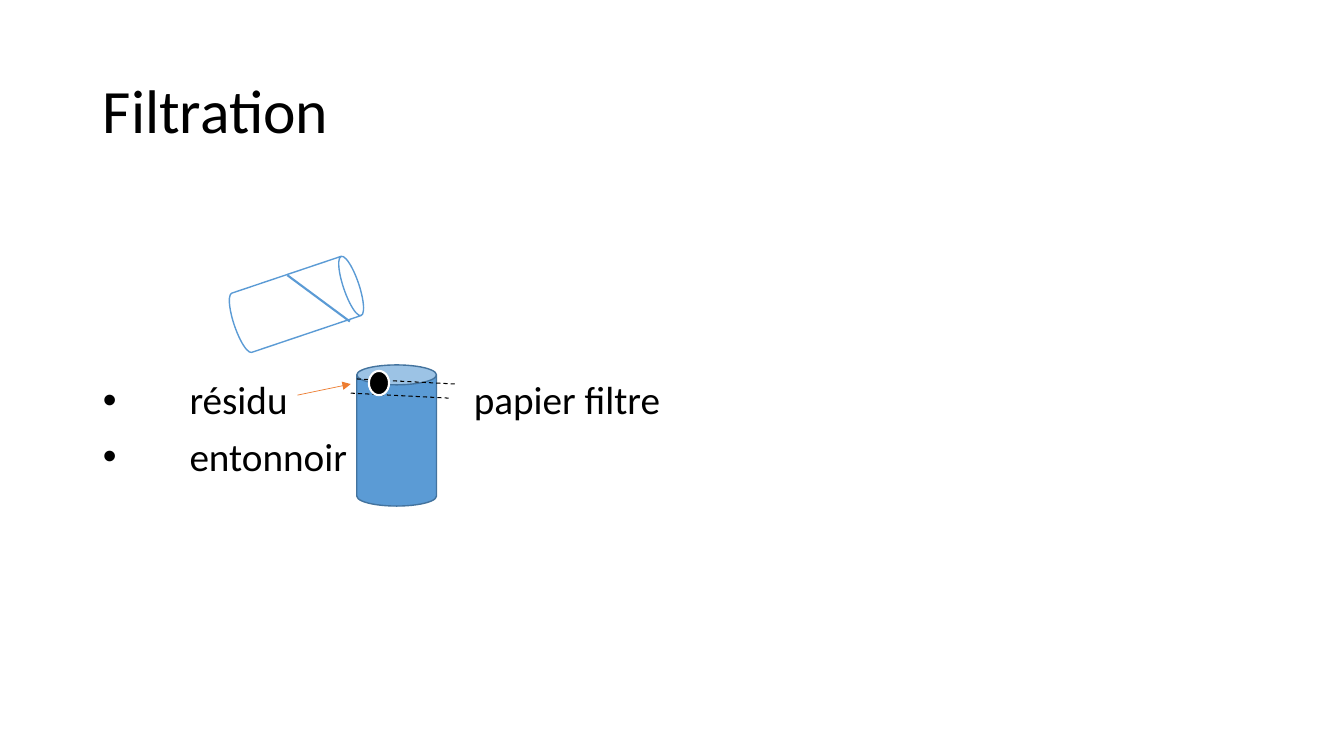
from pptx import Presentation, util as u
from pptx.dml.color import RGBColor
from pptx.enum import dml, shapes, text
from pptx.oxml.ns import qn
from lxml import etree

HUES = {"ink": "000000", "paper": "FFFFFF", "blue": "5B9BD5",
        "rim": "43739E", "arrow": "ED7D31"}
WIDE, HIGH = u.Inches(13.33), u.Inches(7.5)
GRID = 100  # columns and rows on the slide


def hue(name):
    return RGBColor.from_string(HUES[name])


def cols(n):
    return round(WIDE * n / GRID)


def rows(n):
    return round(HIGH * n / GRID)


def place(holder, box):
    x, y, w, h = box
    holder.left, holder.top = cols(x), rows(y)
    holder.width, holder.height = cols(w), rows(h)


def style(par, size):
    par.alignment = text.PP_ALIGN.LEFT
    par.line_spacing = 0.9
    par.font.name, par.font.size = "Calibri", u.Pt(size)
    par.font.color.rgb = hue("ink")


def head(slide, box, words):
    title = slide.shapes.title
    place(title, box)
    frame = title.text_frame
    frame.text = words
    frame.vertical_anchor = text.MSO_ANCHOR.MIDDLE
    frame.auto_size = text.MSO_AUTO_SIZE.NONE
    style(frame.paragraphs[0], 44)


def labels(slide, box, lines):
    """Bulleted labels; a tab carries a label to the right of the vessel."""
    body = slide.placeholders[1]
    place(body, box)
    frame = body.text_frame
    frame.text = "\n".join(lines)
    frame.auto_size = text.MSO_AUTO_SIZE.NONE
    for i, par in enumerate(frame.paragraphs):
        props = par._p.get_or_add_pPr()
        props.set("marL", str(cols(6.45)))
        props.set("indent", str(-cols(6.45)))
        font = etree.SubElement(props, qn("a:buFont"))
        font.set("typeface", "Arial")
        etree.SubElement(props, qn("a:buChar")).set("char", "•")
        tabs = etree.SubElement(props, qn("a:tabLst"))
        stop = etree.SubElement(tabs, qn("a:tab"))
        stop.set("pos", str(cols(27.6)))
        stop.set("algn", "l")
        style(par, 28)
        par.space_before = u.Pt(10 if i else 0)


def solid(slide, box, kind, fill, edge, width, turn=0):
    item = slide.shapes.add_shape(kind, 0, 0, 0, 0)
    place(item, box)
    item.rotation = turn
    item.shadow.inherit = False
    item.fill.solid()
    item.fill.fore_color.rgb = hue(fill)
    item.line.color.rgb = hue(edge)
    item.line.width = u.Pt(width)


def stroke(slide, start, end, color, width, dash=False, tip=False):
    (x, y), (p, q) = start, end
    line = slide.shapes.add_connector(
        shapes.MSO_CONNECTOR.STRAIGHT, cols(x), rows(y), cols(p), rows(q))
    line.line.color.rgb = hue(color)
    line.line.width = u.Pt(width)
    if dash:
        line.line.dash_style = dml.MSO_LINE.DASH
    if tip:
        end = etree.SubElement(line.line._get_or_add_ln(), qn("a:tailEnd"))
        end.set("type", "triangle")
    etree.SubElement(line._element.spPr, qn("a:effectLst"))


def setup(slide, left, top):
    """Tilted beaker above a vessel with its filter and residue."""
    def at(x, y, *size):
        return (left + x, top + y, *size)

    kind = shapes.MSO_SHAPE
    solid(slide, at(4.73, 1.6, 4.65, 17.33), kind.CAN, "paper", "blue", 1, 71.4)
    solid(slide, at(11.55, 18.27, 5.93, 18.67), kind.CAN, "blue", "rim", 1)
    for x, y in ((11.55, 20.13), (11.1, 22)):
        stroke(slide, at(x, y), at(x + 7.35, y + 0.67), "ink", 0.75, dash=True)
    stroke(slide, at(6.38, 6.4), at(11.03, 12.53), "blue", 1.5)
    solid(slide, at(12.45, 19.07, 1.5, 3.2), kind.FLOWCHART_CONNECTOR,
          "ink", "paper", 1.5)
    stroke(slide, at(7.13, 22.27), at(11.1, 20.8), "arrow", 0.5, tip=True)


def main():
    deck = Presentation()
    deck.slide_width, deck.slide_height = WIDE, HIGH
    slide = deck.slides.add_slide(deck.slide_layouts[1])
    head(slide, (6.9, 5.33, 86.25, 19.33), "Filtration")
    labels(slide, (6.9, 49.73, 86.25, 40.4),
           ["résidu\tpapier filtre", "entonnoir"])
    setup(slide, 15, 30)
    deck.save("out.pptx")


if __name__ == "__main__":
    main()
